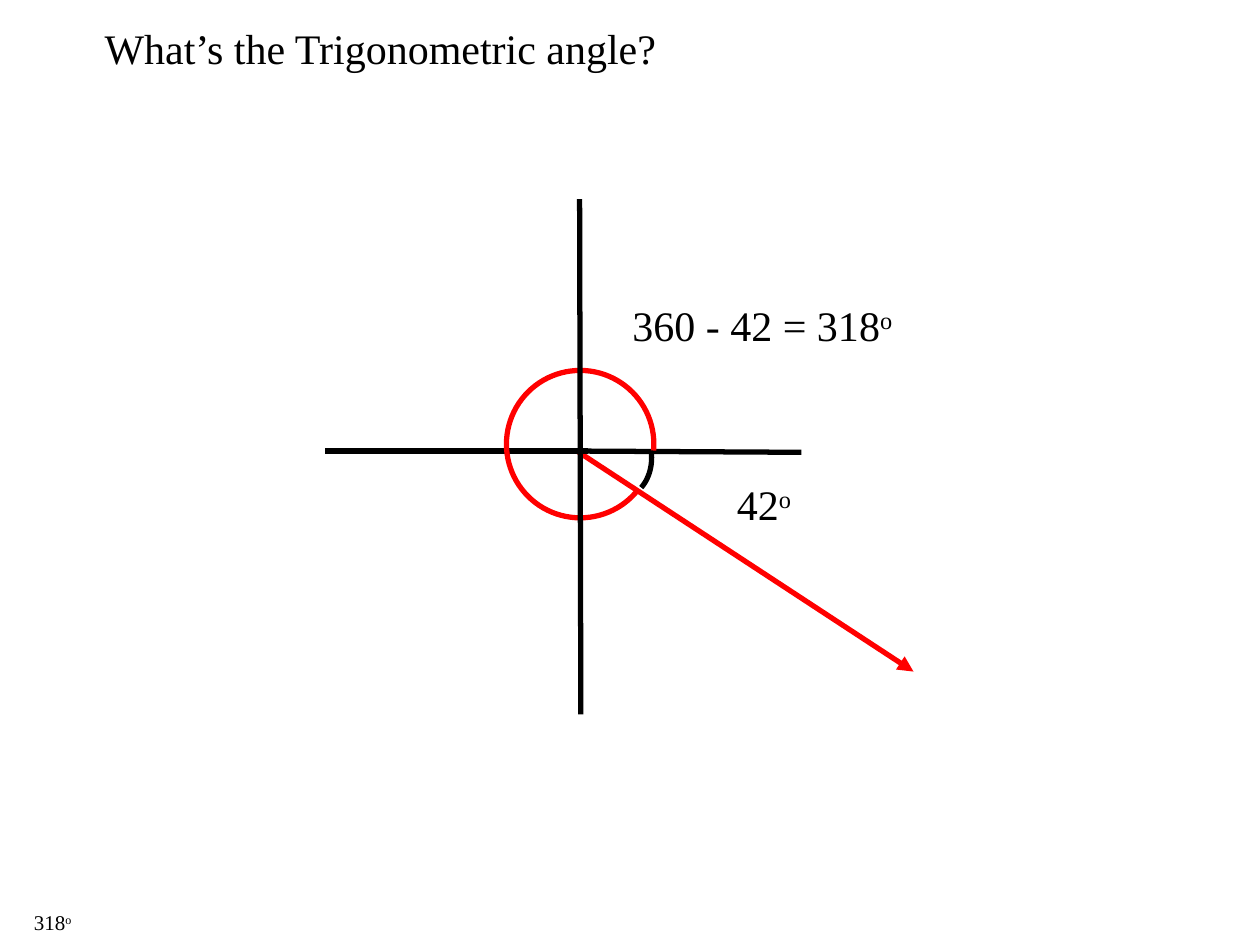
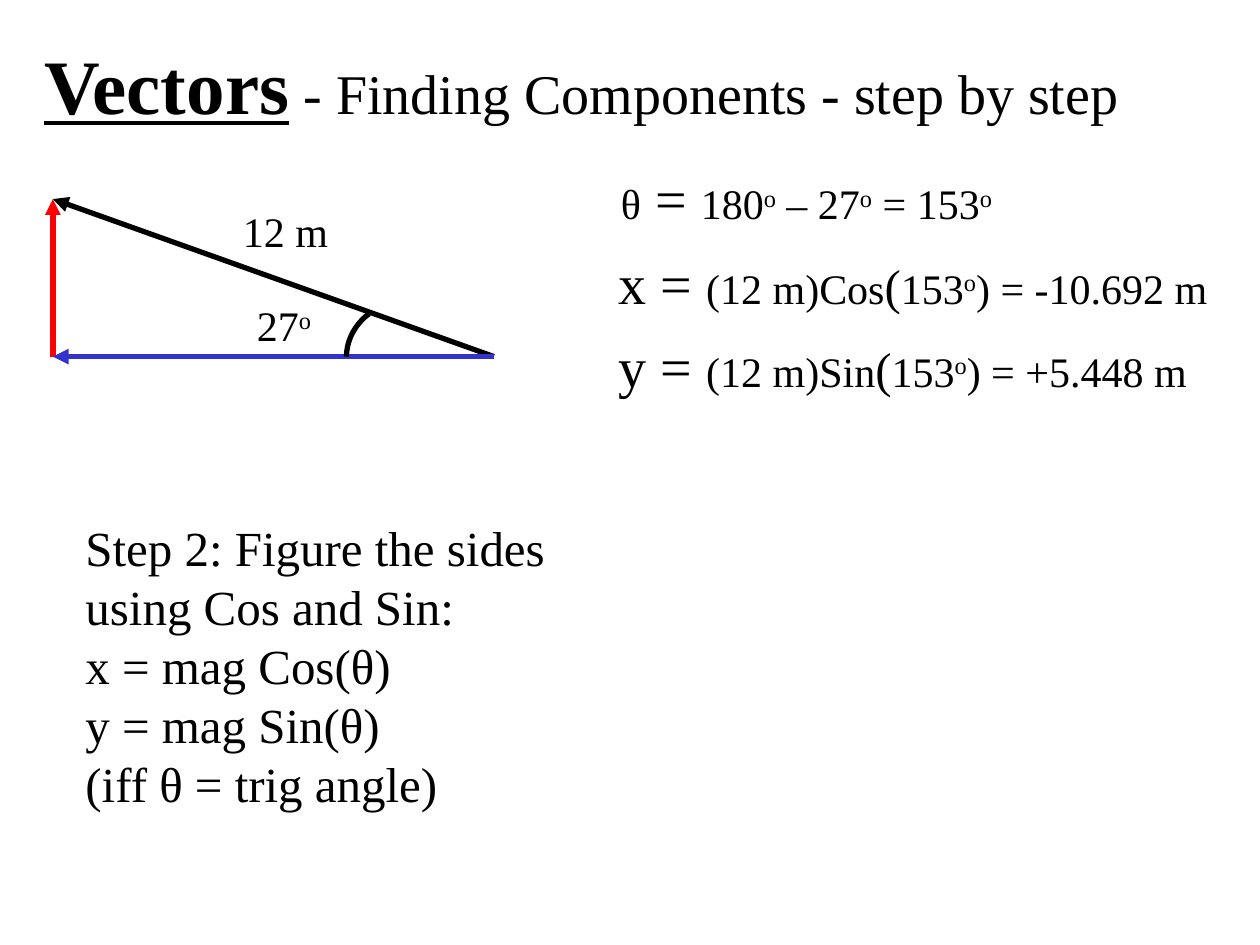
from dataclasses import dataclass

from lxml.etree import SubElement
from pptx import Presentation
from pptx.dml.color import RGBColor
from pptx.enum.shapes import MSO_CONNECTOR as Connector, MSO_SHAPE as Shape
from pptx.enum.text import MSO_ANCHOR as Anchor, MSO_AUTO_SIZE as AutoSize, PP_ALIGN as Align
from pptx.oxml.ns import qn
from pptx.util import Inches, Pt


@dataclass(frozen=True)
class Theme:
    font: str = "Times New Roman"
    ink: RGBColor = RGBColor(0, 0, 0)
    red: RGBColor = RGBColor(0xFF, 0, 0)
    blue: RGBColor = RGBColor(0x33, 0x33, 0xCC)
    stroke: int = 3
    note: int = 12
    label: int = 24
    step: int = 28
    equation: int = 32
    headline: int = 44


class Deck:
    def __init__(self, theme):
        self.theme = theme
        self.prs = Presentation()
        self.prs.slide_width, self.prs.slide_height = Inches(10), Inches(7.5)
        self.slide = None

    def new_slide(self, box, *pieces):
        self.slide = self.prs.slides.add_slide(self.prs.slide_layouts[5])
        title = self.slide.shapes.title
        title.left, title.top, title.width, title.height = map(Inches, box)
        self.fill_text(title.text_frame, [pieces])
        return title.text_frame.paragraphs[0]

    def text(self, box, *lines, hanging=0):
        frame = self.slide.shapes.add_textbox(*map(Inches, box)).text_frame
        self.fill_text(frame, lines, hanging)

    def fill_text(self, frame, lines, hanging=0):
        frame.word_wrap = False
        frame.auto_size = AutoSize.SHAPE_TO_FIT_TEXT
        frame.vertical_anchor = Anchor.TOP
        for index, pieces in enumerate(lines):
            paragraph = frame.add_paragraph() if index else frame.paragraphs[0]
            paragraph.alignment = Align.LEFT
            paragraph.font.name = self.theme.font
            paragraph.font.color.rgb = self.theme.ink
            if hanging:
                properties = paragraph._p.get_or_add_pPr()
                properties.set("marL", str(Inches(hanging)))
                properties.set("indent", str(-Inches(hanging)))
            sizes = {size for _, size in pieces}
            if len(sizes) == 1:
                paragraph.font.size = Pt(sizes.pop())
                self.add_runs(paragraph, pieces, False)
            else:
                self.add_runs(paragraph, pieces, True)

    def add_runs(self, paragraph, pieces, sized):
        for wording, size in pieces:
            for index, part in enumerate(wording.split("°")):
                for content, raised in (("o", True),) * bool(index) + ((part, False),):
                    if not content:
                        continue
                    run = paragraph.add_run()
                    run.text = content
                    if sized:
                        run.font.size = Pt(size)
                    if raised:
                        run._r.get_or_add_rPr().set("baseline", "30000")

    def line(self, start, end, color=None, arrow=False):
        connector = self.slide.shapes.add_connector(
            Connector.STRAIGHT, *map(Inches, start + end))
        connector.line.color.rgb = color or self.theme.ink
        connector.line.width = Pt(self.theme.stroke)
        if arrow:
            SubElement(connector.line._get_or_add_ln(), qn("a:tailEnd"), type="triangle")
        SubElement(connector._element.spPr, qn("a:effectLst"))

    def outline(self, shape, color=None):
        shape.shadow.inherit = False
        shape.fill.background()
        shape.line.color.rgb = color or self.theme.ink
        shape.line.width = Pt(self.theme.stroke)

    def arc(self, left, top, diameter, start, end, color=None):
        arc = self.slide.shapes.add_shape(
            Shape.ARC, *map(Inches, (left, top, diameter, diameter)))
        arc.adjustments[0], arc.adjustments[1] = start * 0.6, end * 0.6
        self.outline(arc, color)

    def angle_mark(self, apex, *controls, steps=16):
        points = []
        for step in range(steps + 1):
            t = step / steps
            weights = ((1 - t) ** 3, 3 * t * (1 - t) ** 2, 3 * t * t * (1 - t), t ** 3)
            points.append(tuple(
                Inches(sum(weight * value for weight, value in zip(weights, values)))
                for values in zip(*controls)))
        builder = self.slide.shapes.build_freeform(*map(Inches, apex))
        builder.move_to(*points[0])
        builder.add_line_segments(points[1:], close=False)
        self.outline(builder.convert_to_shape())


def trigonometric_angle(deck):
    theme = deck.theme
    deck.new_slide((0.73, 0.13, 4.61, 0.5),
                   ("What’s the Trigonometric angle?", theme.label))
    deck.text((0.17, 7.17, 0.51, 0.3), [("318°", theme.note)])
    deck.line((4.58, 3.58), (7.25, 5.33), theme.red, arrow=True)
    deck.text((5.75, 3.75, 0.65, 0.5), [("42°", theme.label)])
    deck.angle_mark((4.69, 3.44), (5.09, 3.87), (5.15, 3.8), (5.18, 3.7), (5.17, 3.59))
    deck.line((4.61, 3.58), (6.36, 3.59))
    deck.line((4.67, 3.58), (2.58, 3.58))
    deck.text((4.92, 2.33, 2.28, 0.5), [("360 - 42 = 318°", theme.label)])
    deck.arc(4.02, 2.94, 1.17, 39.5, 5, theme.red)
    deck.line((4.6, 1.58), (4.61, 5.67))


def vector_components(deck):
    theme = deck.theme
    heading = deck.new_slide((0.25, 0.25, 8.78, 0.83),
                             ("Vectors", theme.headline),
                             (" - Finding Components - step by step", theme.equation))
    topic = heading.runs[0].font
    topic.bold = topic.underline = True

    steps = ("Step 2: Figure the sides", "using Cos and Sin:",
             "x = mag Cos(θ)", "y = mag Sin(θ)", "(iff θ = trig angle)")
    deck.text((0.58, 4.06, 3.85, 2.44), *([(step, theme.step)] for step in steps),
              hanging=0.5)

    deck.text((4.83, 1.25, 3.28, 0.63),
              [("θ", theme.label), (" = ", theme.equation),
               ("180° – 27° = 153°", theme.label)])
    components = (("x", "Cos", "-10.692", 1.92, 4.89),
                  ("y", "Sin", "+5.448", 2.58, 4.72))
    for axis, function, value, top, width in components:
        deck.text((4.81, top, width, 0.63),
                  [(f"{axis} = ", theme.equation), (f"(12 m){function}", theme.label),
                   ("(", theme.step), (f"153°) = {value} m", theme.label)])

    origin, corner, tip = (3.92, 2.83), (0.42, 2.83), (0.42, 1.58)
    deck.line(corner, tip, theme.red, arrow=True)
    deck.line(origin, tip, arrow=True)
    deck.text((1.83, 1.58, 0.88, 0.5), [("12 m", theme.label)])
    deck.line((2.17, 2.83), (3.42, 2.83))
    deck.text((1.94, 2.33, 0.65, 0.5), [("27°", theme.label)])
    deck.line(origin, corner, theme.blue, arrow=True)
    deck.angle_mark((3.17, 2.83), (2.93, 2.49), (2.82, 2.57), (2.75, 2.7), (2.75, 2.83))


def main():
    deck = Deck(Theme())
    trigonometric_angle(deck)
    vector_components(deck)
    deck.prs.save("out.pptx")


if __name__ == "__main__":
    main()
